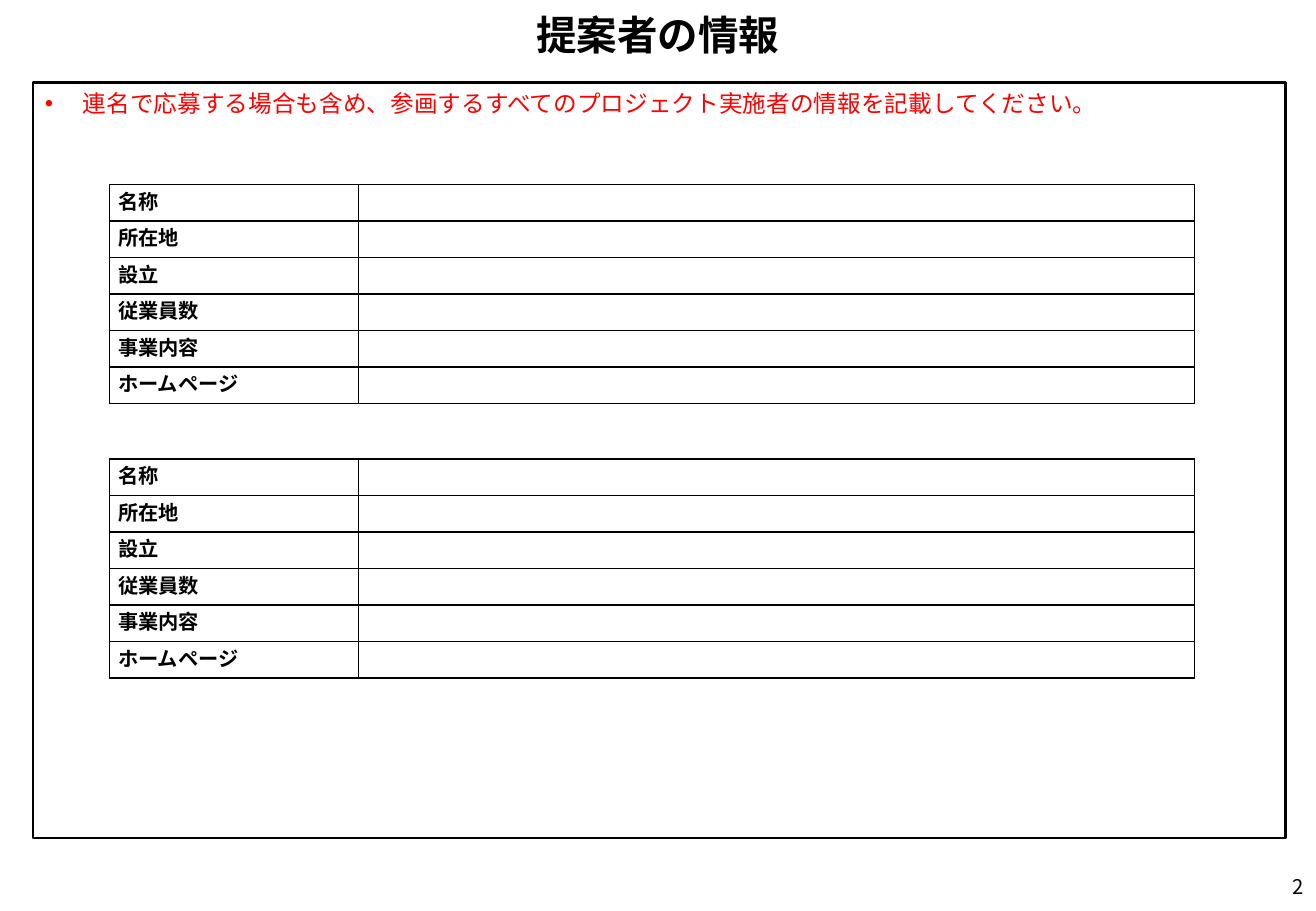
from lxml import etree
from pptx import Presentation
from pptx.dml.color import RGBColor
from pptx.enum.shapes import MSO_SHAPE
from pptx.enum.text import MSO_ANCHOR, PP_ALIGN
from pptx.oxml.ns import qn
from pptx.util import Cm, Pt

BLACK = RGBColor(0, 0, 0)
WHITE = RGBColor(255, 255, 255)
RED = RGBColor(255, 0, 0)
FONT = "Noto Sans CJK JP"
RECTANGLE = MSO_SHAPE.RECTANGLE
TOP, MIDDLE = MSO_ANCHOR.TOP, MSO_ANCHOR.MIDDLE
LEFT, CENTER, RIGHT = PP_ALIGN.LEFT, PP_ALIGN.CENTER, PP_ALIGN.RIGHT
JUSTIFY = PP_ALIGN.JUSTIFY

PAGE_WIDTH, PAGE_HEIGHT = Cm(27.51), Cm(19.05)
LABEL_WIDTH = Cm(5.2)
LABELS = ["名称", "所在地", "設立", "従業員数", "事業内容", "ホームページ"]
BORDER_SIDES = ["a:lnL", "a:lnR", "a:lnT", "a:lnB"]


def write_text(frame, text, size=12, color=BLACK, bold=False, align=LEFT,
               spacing=None, indent=0, bullet=None):
    """Write one formatted paragraph into a text frame."""
    para = frame.paragraphs[0]
    para.alignment = align
    para.line_spacing = spacing
    properties = para._p.get_or_add_pPr()
    if indent:
        properties.set("marL", str(indent))
        properties.set("indent", str(-indent))
    if bullet:
        etree.SubElement(properties, qn("a:buFont"), typeface="Arial")
        etree.SubElement(properties, qn("a:buChar"), char=bullet)
    if text:
        span = para.add_run()
        span.text = text
        span.font.size, span.font.bold = Pt(size), bold
        span.font.color.rgb = color
        span.font.name = FONT
        etree.SubElement(span._r.get_or_add_rPr(), qn("a:ea"), typeface=FONT)


def add_label(page, box, text, **text_format):
    """Place a wrapped, vertically centred text box."""
    frame = page.shapes.add_textbox(*box).text_frame
    frame.word_wrap = True
    frame.vertical_anchor = MIDDLE
    write_text(frame, text, **text_format)


def add_instruction_panel(page, box, text):
    """Draw the outlined panel with its red instruction."""
    panel = page.shapes.add_shape(RECTANGLE, *box)
    panel.shadow.inherit = False
    panel.fill.solid()
    panel.fill.fore_color.rgb = WHITE
    panel.line.color.rgb = BLACK
    panel.line.width = Pt(1.5)
    panel.text_frame.vertical_anchor = TOP
    panel.text_frame.word_wrap = True
    write_text(panel.text_frame, text, size=14, color=RED,
               indent=Cm(0.79), bullet="•")


def format_cell(cell):
    """Give a cell a white fill, thin black borders and tight margins."""
    cell.margin_left = cell.margin_right = Cm(0.18)
    cell.margin_top = cell.margin_bottom = 0
    properties = cell._tc.get_or_add_tcPr()
    for side in BORDER_SIDES:
        border = etree.SubElement(properties, qn(side), w=str(Pt(1)))
        paint = etree.SubElement(border, qn("a:solidFill"))
        etree.SubElement(paint, qn("a:srgbClr"), val=str(BLACK))
    cell.fill.solid()
    cell.fill.fore_color.rgb = WHITE


def add_proposer_table(page, box):
    """Add a form table with proposer labels and blank answer cells."""
    table = page.shapes.add_table(len(LABELS), 2, *box).table
    table.first_row = table.horz_banding = False
    table.columns[0].width = LABEL_WIDTH
    table.columns[1].width = box[2] - LABEL_WIDTH
    for row, label in enumerate(LABELS):
        for column, text in enumerate([label, ""]):
            cell = table.cell(row, column)
            format_cell(cell)
            write_text(cell.text_frame, text, bold=True, align=JUSTIFY,
                       spacing=Pt(18), indent=Cm(0.38))


def build_proposer_page(page, box):
    """Lay out the proposer information page inside the box."""
    left, top, width, height = box
    add_instruction_panel(
        page, (left + Cm(0.69), top + Cm(1.73), Cm(26.19), Cm(15.8)),
        "連名で応募する場合も含め、参画するすべてのプロジェクト実施者の情報を記載してください。")
    add_label(page, (left, top, width, Cm(1.55)), "提案者の情報",
              size=24, bold=True, align=CENTER, spacing=0.9)
    number_width, number_height = Cm(6.19), Cm(1.02)
    add_label(page, (left + width - number_width, top + height - number_height,
                     number_width, number_height), "2", align=RIGHT)
    for table_top in (Cm(3.86), Cm(9.6)):
        add_proposer_table(
            page, (left + Cm(2.29), top + table_top, Cm(22.68), Cm(3.81)))


def main():
    """Build and save the deck."""
    deck = Presentation()
    deck.slide_width, deck.slide_height = PAGE_WIDTH, PAGE_HEIGHT
    page = deck.slides.add_slide(deck.slide_layouts[6])
    build_proposer_page(page, (0, 0, PAGE_WIDTH, PAGE_HEIGHT))
    deck.save("out.pptx")


if __name__ == "__main__":
    main()
